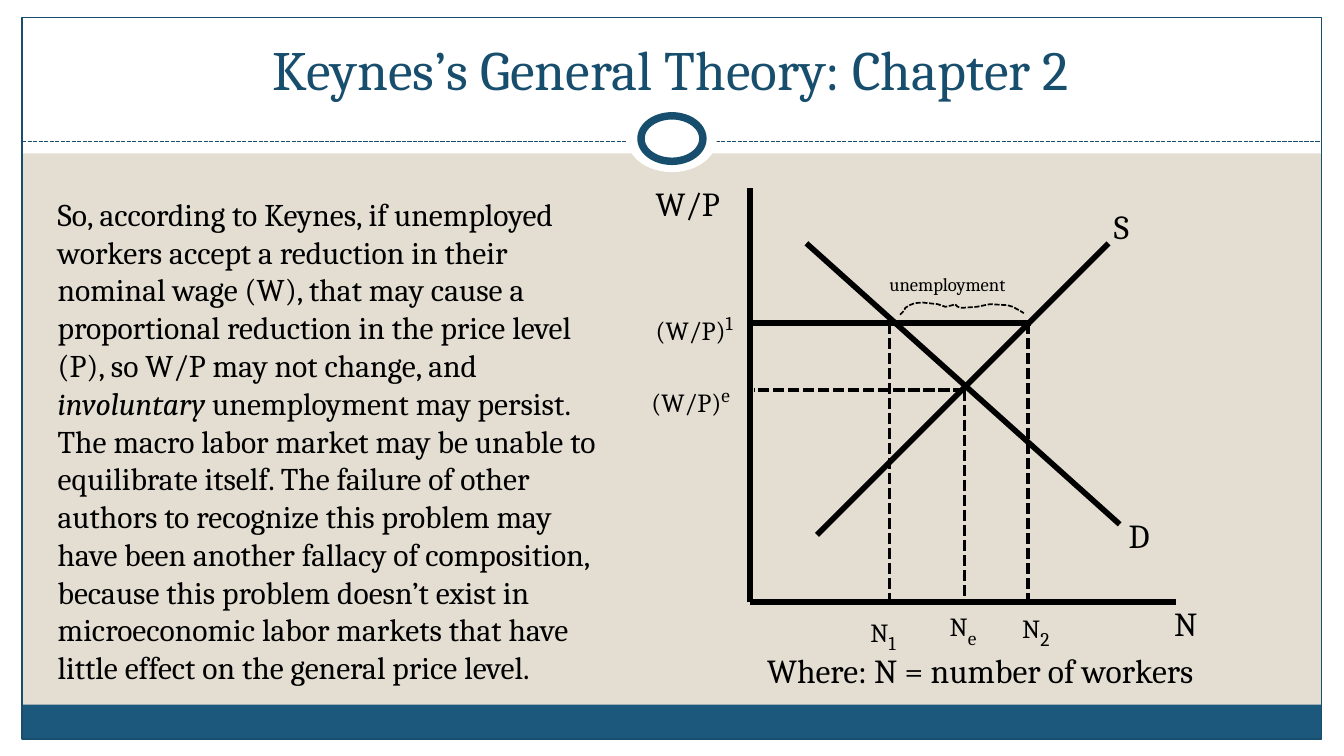
import pptx
import pptx.dml.color
import pptx.enum.dml
import pptx.enum.shapes
import pptx.enum.text
import pptx.oxml
import pptx.oxml.ns
import pptx.util

Cm = pptx.util.Cm
Pt = pptx.util.Pt
SHAPE = pptx.enum.shapes.MSO_SHAPE
COLORS = {"sand": "E3DED1", "white": "FFFFFF", "band": "1B587C", "navy": "184E6D", "ink": "000000"}
FONT = "Cambria"
WIDE, HIGH = 25.4, 14.29


def paint(part, name):
    """Give a fill or font colour a named solid colour."""
    part.solid()
    part.fore_color.rgb = pptx.dml.color.RGBColor.from_string(COLORS[name])


def stroke(line, name, width, dash=False):
    """Set the colour, width and dash of a line."""
    paint(line.fill, name)
    line.width = Pt(width)
    if dash:
        line.dash_style = pptx.enum.dml.MSO_LINE.SQUARE_DOT


def add_form(slide, kind, box, fill=None, line=None):
    """Add a preset shape with an optional fill and (colour, width) line."""
    form = slide.shapes.add_shape(kind, *map(Cm, box))
    form.shadow.inherit = False
    if fill:
        paint(form.fill, fill)
    else:
        form.fill.background()
    if line:
        stroke(form.line, *line)
    else:
        form.line.fill.background()


def add_line(slide, start, end, name, width, dash=False):
    """Add a straight line without a shadow."""
    kind = pptx.enum.shapes.MSO_CONNECTOR.STRAIGHT
    line = slide.shapes.add_connector(kind, *map(Cm, start + end))
    stroke(line.line, name, width, dash)
    props = line._element.spPr
    props.append(pptx.oxml.parse_xml(f"<a:effectLst {pptx.oxml.ns.nsdecls('a')}/>"))


def add_text(slide, box, parts, size, name="ink", wrap=True):
    """Add a text box of one paragraph and return its frame."""
    frame = slide.shapes.add_textbox(*map(Cm, box)).text_frame
    frame.word_wrap = wrap
    for part in parts:
        run = frame.paragraphs[0].add_run()
        run.text = part
        run.font.name = FONT
        run.font.size = Pt(size)
        paint(run.font.fill, name)
    return frame


def add_label(slide, box, text, size=18, mark=None, base=0, wrap=False):
    """Add a label that grows with its text and may bear a raised or lowered mark."""
    frame = add_text(slide, box, [text, mark] if mark else [text], size, wrap=wrap)
    frame.auto_size = pptx.enum.text.MSO_AUTO_SIZE.SHAPE_TO_FIT_TEXT
    if mark:
        font = frame.paragraphs[0].runs[1].font
        font.size = Pt(18)
        font._element.set("baseline", str(base * 1000))


def draw_frame(slide, box):
    """Draw the white border, the blue band, the divider and the ring."""
    left, top, wide, high = box
    edge, head, foot = 0.42, 2.9, 0.32
    inner = wide - 2 * edge
    for area in (
        (left, top + high - foot, wide, foot),
        (left, top, wide, head),
        (left, top, edge, high),
        (left + wide - edge, top, edge, high),
    ):
        add_form(slide, SHAPE.RECTANGLE, area, "white")
    add_form(slide, SHAPE.RECTANGLE, (left + edge, top + 13.32, inner, 0.64), "band")
    add_form(slide, SHAPE.RECTANGLE, (left + edge, top + 0.33, inner, 13.64), line=("navy", 0.75))
    rule = top + 2.67
    add_line(slide, (left + edge, rule), (left + wide - edge, rule), "navy", 0.75, True)
    mid, level = left + wide / 2, top + 2.62
    for w, h, line in ((1.7, 1.27, None), (1.17, 0.86, ("navy", 4))):
        add_form(slide, SHAPE.OVAL, (mid - w / 2, level - h / 2, w, h), "white", line)


def draw_title(slide, box):
    """Write the centred title at the foot of its box."""
    frame = add_text(slide, box, ["Keynes’s General Theory: Chapter 2"], 29.7, "navy")
    frame.vertical_anchor = pptx.enum.text.MSO_ANCHOR.BOTTOM
    frame.paragraphs[0].alignment = pptx.enum.text.PP_ALIGN.CENTER


def draw_body(slide, box):
    """Write the main paragraph with one word in italics."""
    parts = [
        "So, according to Keynes, if unemployed workers accept a reduction in their nominal wage (W), "
        "that may cause a proportional reduction in the price level (P), so W/P may not change, and ",
        "involuntary",
        " unemployment may persist. The macro labor market may be unable to equilibrate itself. "
        "The failure of other authors to recognize this problem may have been another fallacy of "
        "composition, because this problem doesn’t exist in microeconomic labor markets that have "
        "little effect on the general price level.",
    ]
    para = add_text(slide, box, parts, 16.9).paragraphs[0]
    para.line_spacing = Pt(20.25)
    para.runs[1].font.italic = True


def draw_brace(slide, left, top):
    """Draw the dashed wavy brace over the jobless gap."""
    points = [
        (0, 0.23), (0.08, 0.15), (0.1, 0.1), (0.18, 0.05), (0.28, 0.01), (0.43, 0),
        (0.71, 0.03), (0.86, 0.08), (0.99, 0.05), (1.04, 0.03), (1.09, 0.08), (1.17, 0.1),
        (1.45, 0.08), (1.7, 0.03), (2.03, 0.05), (2.13, 0.08), (2.26, 0.15), (2.34, 0.2),
    ]
    spots = [(Cm(left + x), Cm(top + y)) for x, y in points]
    form = slide.shapes.build_freeform(*spots[0])
    form.add_line_segments(spots[1:], close=False)
    brace = form.convert_to_shape()
    brace.shadow.inherit = False
    brace.fill.background()
    stroke(brace.line, "ink", 0.9, True)


def draw_graph(slide, box):
    """Draw the labour market graph with its axes at the box's left and foot."""
    left, top, wide, high = box
    wage, fair = 2.54, 3.81
    few, even, many = 2.64, 4.06, 5.26
    solid = [
        ((0, 0), (0, high)),
        ((0, high), (wide, high)),
        ((1.07, 1.04), (6.99, 6.35)),
        ((1.27, 6.55), (6.78, 1.04)),
        ((0, wage), (5.31, wage)),
    ]
    dashed = [((even, fair), (0.08, fair))]
    dashed += [((x, y), (x, high)) for x, y in ((few, wage), (many, wage), (even, fair))]
    for lines, width, dash in ((solid, 3, False), (dashed, 2, True)):
        for start, end in lines:
            spots = [(left + x, top + y) for x, y in (start, end)]
            add_line(slide, *spots, "ink", width, dash)
    draw_brace(slide, left + 2.84, top + 2.16)
    for x, y, w, text in (
        (-2.03, -0.23, 1.83, "W/P"),
        (7.77, 7.72, 0.99, "N"),
        (6.63, 0.2, 0.86, "S"),
        (6.91, 6.05, 0.99, "D"),
        (0.08, 8.61, 9.53, "Where: N = number of workers"),
    ):
        add_label(slide, (left + x, top + y, w, 1.02), text)
    for x, y, w, text, mark, base in (
        (-2.03, 2.11, 2.08, "(W/P)", "1", 30),
        (-2.11, 3.48, 2.11, "(W/P)", "e", 30),
        (2.03, 7.82, 1.07, "N", "1", -25),
        (3.53, 7.72, 1.09, "N", "e", -25),
        (4.9, 7.75, 1.14, "N", "2", -25),
    ):
        add_label(slide, (left + x, top + y, w, 0.86), text, 14, mark, base)
    add_label(slide, (left + 2.39, top + 1.47, 3.28, 0.69), "unemployment", 10, wrap=True)


def main():
    """Build the slide and save it."""
    deck = pptx.Presentation()
    deck.slide_width, deck.slide_height = Cm(WIDE), Cm(HIGH)
    slide = deck.slides.add_slide(deck.slide_layouts[6])
    paint(slide.background.fill, "sand")
    draw_frame(slide, (0, 0, WIDE, HIGH))
    draw_title(slide, (0.84, 0.48, 23.7, 1.57))
    draw_body(slide, (0.84, 3.56, 10.82, 9.65))
    draw_graph(slide, (14.17, 3.56, 8.05, 7.82))
    deck.save("out.pptx")


if __name__ == "__main__":
    main()
